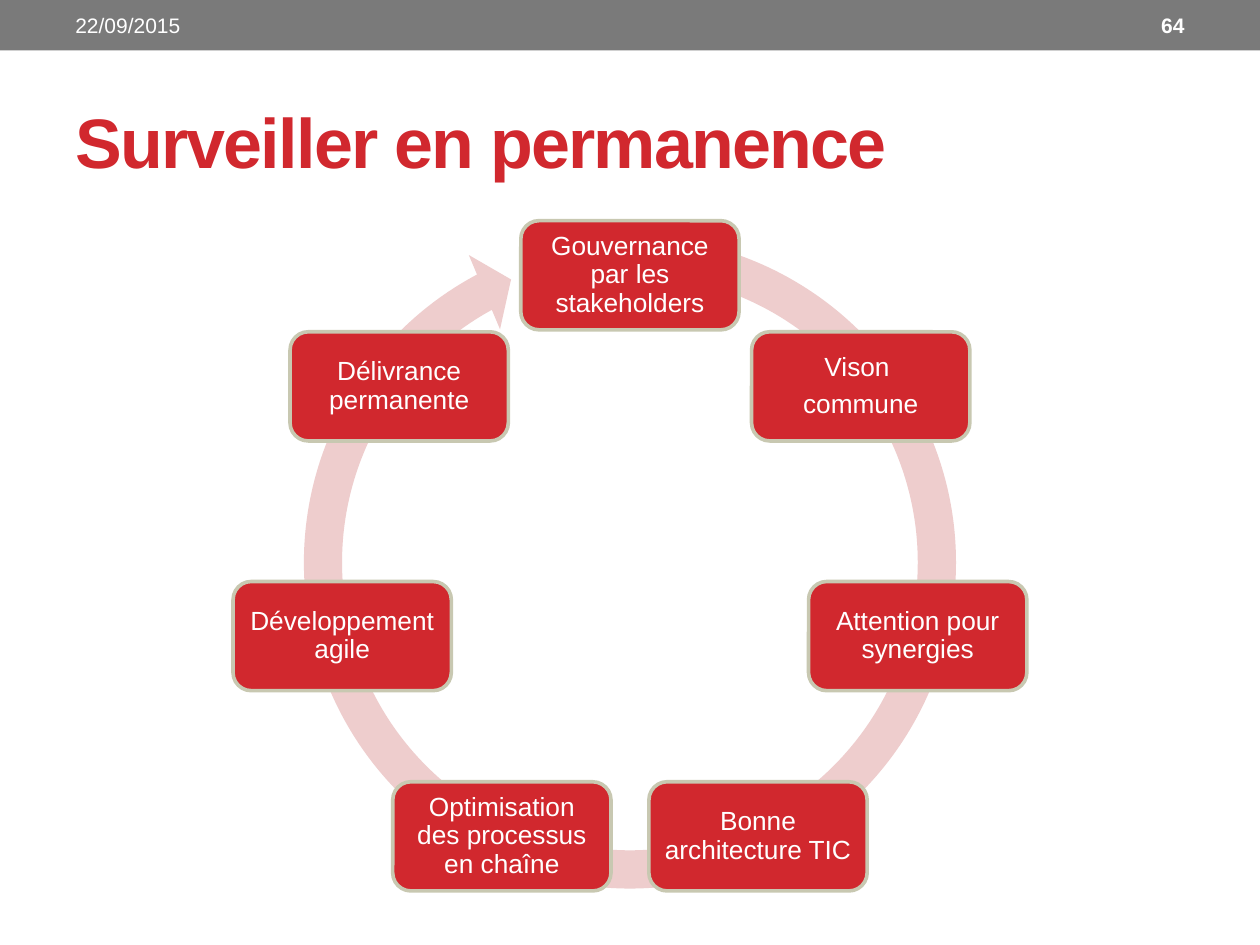
import math

import pptx
import pptx.dml.color
import pptx.enum.shapes
import pptx.enum.text
import pptx.util
import lxml.etree

Cm = pptx.util.Cm
Pt = pptx.util.Pt
RGBColor = pptx.dml.color.RGBColor
SHAPE = pptx.enum.shapes.MSO_SHAPE
ALIGN = pptx.enum.text.PP_ALIGN
ANCHOR = pptx.enum.text.MSO_ANCHOR

RED = RGBColor(0xD1, 0x28, 0x2E)
PINK = RGBColor(0xEE, 0xCD, 0xCD)
SAGE = RGBColor(0xC8, 0xC8, 0xB1)
GREY = RGBColor(0x7A, 0x7A, 0x7A)
WHITE = RGBColor(0xFF, 0xFF, 0xFF)

STEPS = [
    ["Gouvernance par les stakeholders"],
    ["Vison ", "commune"],
    ["Attention pour synergies"],
    ["Bonne architecture TIC"],
    ["Optimisation des processus en chaîne"],
    ["Développement agile"],
    ["Délivrance permanente"],
]


def add_span(para, text, size, color, bold=False):
    span = para.add_run()
    span.text = text
    span.font.name = "Arial"
    span.font.size = Pt(size)
    span.font.bold = bold
    span.font.color.rgb = color
    return span


def add_solid(page, kind, left, top, width, height, color):
    shape = page.shapes.add_shape(kind, Cm(left), Cm(top), Cm(width), Cm(height))
    shape.shadow.inherit = False
    shape.fill.solid()
    shape.fill.fore_color.rgb = color
    shape.line.fill.background()
    return shape


def add_label(page, left, top, width, height, text, size, color, bold=False, align=ALIGN.LEFT):
    box = page.shapes.add_textbox(Cm(left), Cm(top), Cm(width), Cm(height))
    frame = box.text_frame
    frame.word_wrap = True
    frame.vertical_anchor = ANCHOR.MIDDLE
    para = frame.paragraphs[0]
    para.alignment = align
    return add_span(para, text, size, color, bold)


def add_header(page, left, top, width, height):
    add_solid(page, SHAPE.RECTANGLE, left, top, width, height, GREY)
    margin, inset = 1.27, 0.05
    label_top, label_height = top + inset, height - 2 * inset
    number_width = 2.97
    add_label(page, left + margin, label_top, 8.05, label_height, "22/09/2015", 12, WHITE)
    add_label(page, left + width - margin - number_width, label_top, number_width,
              label_height, "64", 12, WHITE, True, ALIGN.RIGHT)


def add_title(page, left, top, width, height):
    span = add_label(page, left, top, width, height, "Surveiller en permanence", 40, RED, True)
    span.font._element.set("spc", "-100")


def add_step(page, center_x, center_y, lines):
    width, height = 4.4, 2.2
    card = add_solid(page, SHAPE.ROUNDED_RECTANGLE, center_x - width / 2,
                     center_y - height / 2, width, height, RED)
    card.line.color.rgb = SAGE
    card.line.width = Pt(2.08)
    frame = card.text_frame
    frame.word_wrap = True
    frame.vertical_anchor = ANCHOR.MIDDLE
    frame.margin_left = frame.margin_right = Cm(0.15)
    frame.margin_top = frame.margin_bottom = Cm(0.15)
    for index, text in enumerate(lines):
        para = frame.add_paragraph() if index else frame.paragraphs[0]
        para.alignment = ALIGN.CENTER
        para.line_spacing = 0.9
        para.space_after = Pt(5.25)
        add_span(para, text, 15, WHITE)


def add_cycle(page, left, top, size, steps):
    arrow = add_solid(page, SHAPE.CIRCULAR_ARROW, left, top, size, size, PINK)
    for index, value in enumerate([0.055, 3.307, 145.024, 169.579, 0.058]):
        arrow.adjustments[index] = value
    radius = 5.95
    center_x, center_y = left + size / 2, top + size / 2 + 0.16
    for index, lines in enumerate(steps):
        angle = 2 * math.pi * index / len(steps)
        add_step(page, center_x + radius * math.sin(angle),
                 center_y - radius * math.cos(angle), lines)


def main():
    deck = pptx.Presentation()
    deck.slide_width = Cm(25.4)
    deck.slide_height = Cm(19.05)
    page = deck.slides.add_slide(deck.slide_layouts[6])
    add_header(page, 0, 0, 25.4, 1.02)
    add_title(page, 1.27, 1.47, 22.86, 2.74)
    add_cycle(page, 5.7, 4.34, 14, STEPS)
    deck.save("out.pptx")


if __name__ == "__main__":
    main()
